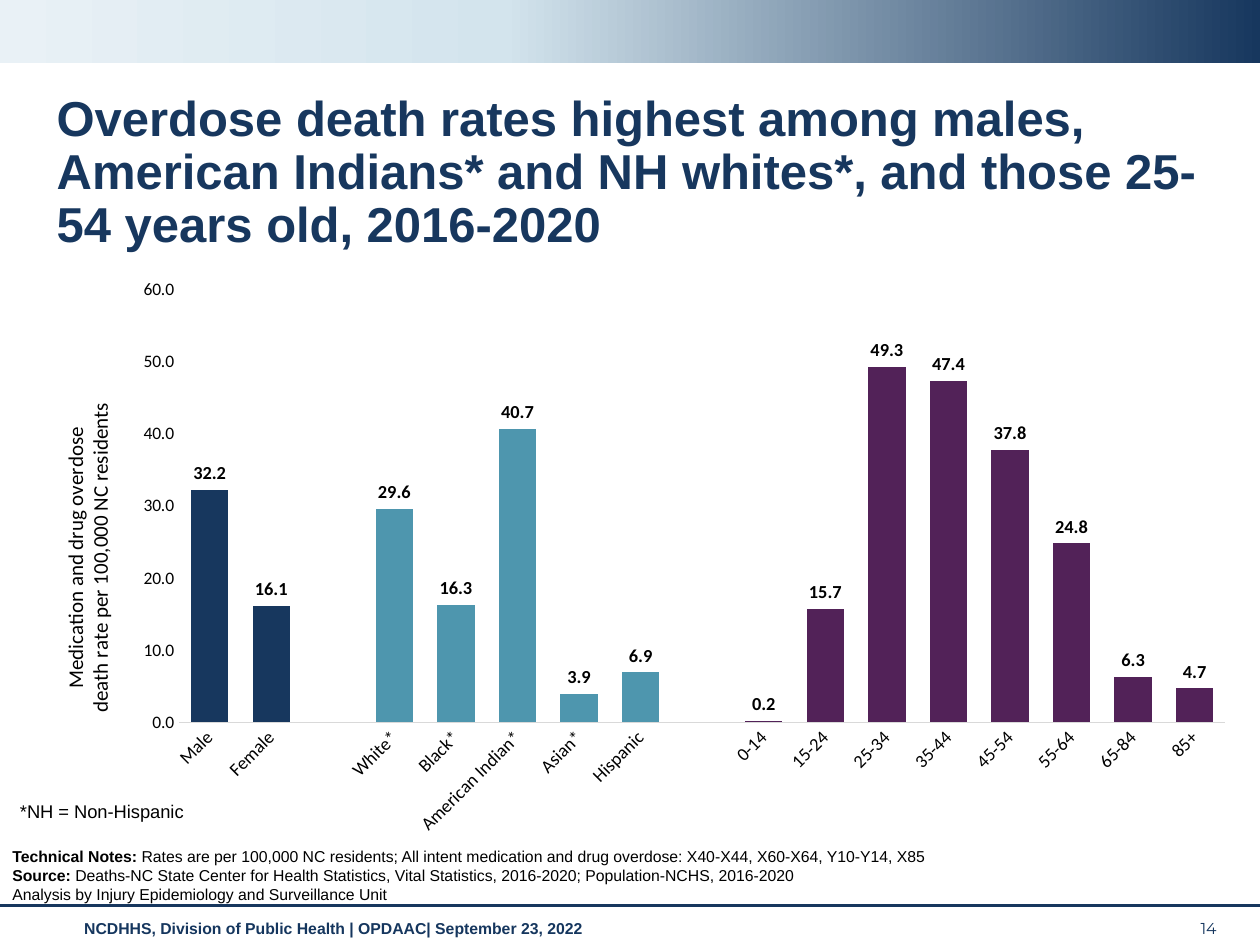
from copy import deepcopy

from lxml.etree import SubElement
from pptx import Presentation
from pptx.chart.data import CategoryChartData
from pptx.dml.color import RGBColor
from pptx.enum.chart import XL_CHART_TYPE, XL_LABEL_POSITION, XL_TICK_MARK
from pptx.enum.shapes import MSO_CONNECTOR, MSO_SHAPE
from pptx.enum.text import MSO_ANCHOR, PP_ALIGN
from pptx.oxml import parse_xml
from pptx.oxml.ns import nsdecls, qn
from pptx.util import Inches, Pt

NAVY, TEAL, PURPLE, BLACK = "17375E", "4E96AE", "522258", "000000"
FOOTER_BLUE = "15365E"
color = RGBColor.from_string


def set_font(font, size, name="Arial", hex_color=BLACK, bold=False):
    font.size, font.name, font.bold = Pt(size), name, bold
    font.color.rgb = color(hex_color)


def write_text(frame, paragraphs, anchor=MSO_ANCHOR.TOP, align=PP_ALIGN.LEFT,
               spacing=None, **font_format):
    """Fill a text frame; a paragraph is a string or a (bold lead, rest) pair."""
    frame.word_wrap = True
    frame.vertical_anchor = anchor
    for index, content in enumerate(paragraphs):
        paragraph = frame.paragraphs[0] if index == 0 else frame.add_paragraph()
        paragraph.alignment = align
        if spacing:
            paragraph.line_spacing = spacing
        parts = [content] if isinstance(content, str) else content
        for position, part in enumerate(parts):
            run = paragraph.add_run()
            run.text = part
            set_font(run.font, **font_format)
            if len(parts) > 1 and position == 0:
                run.font.bold = True


presentation = Presentation()
presentation.slide_width, presentation.slide_height = Inches(10), Inches(7.5)
slide = presentation.slides.add_slide(presentation.slide_layouts[5])

# Grid of 10 columns by 7.5 rows: left, top, width, height
column = presentation.slide_width / 10
row = presentation.slide_height / 7.5
grid = {
    "band": (0, 0, 10, 0.5),
    "title": (0.35, 0.7, 9.49, 1.16),
    "chart": (0.31, 2.14, 9.57, 4.6),
    "non_hispanic": (0.06, 6.3, 1.55, 0.28),
    "notes": (0, 6.67, 8.74, 0.55),
    "footer": (0.57, 7.22, 8.74, 0.29),
    "page_number": (9.43, 7.22, 0.44, 0.3),
}
boxes = {
    name: (int(left * column), int(top * row), int(width * column), int(height * row))
    for name, (left, top, width, height) in grid.items()
}

# Gradient band and footer rule
band = slide.shapes.add_shape(MSO_SHAPE.RECTANGLE, *boxes["band"])
band.shadow.inherit = False
band.line.fill.background()
band.fill.gradient()
band.fill.gradient_angle = 0
stop_list = band.element.spPr.find(qn("a:gradFill")).find(qn("a:gsLst"))
stop_list.append(deepcopy(stop_list[-1]))
band_stops = [(0, "E9F1F6"), (0.4, "D3E4ED"), (1, NAVY)]
for stop, (position, hex_color) in zip(band.fill.gradient_stops, band_stops):
    stop.position = position
    stop.color.rgb = color(hex_color)

rule_top = int(7.19 * row)
rule = slide.shapes.add_connector(
    MSO_CONNECTOR.STRAIGHT, 0, rule_top, presentation.slide_width, rule_top)
rule.line.color.rgb = color(NAVY)
rule.line.width = Pt(1.75)
SubElement(rule.element.spPr, qn("a:effectLst"))

# Title
title = slide.shapes.title
title.left, title.top, title.width, title.height = boxes["title"]
write_text(title.text_frame, [
    "Overdose death rates highest among males, American Indians* and NH whites*, "
    "and those 25-54 years old, 2016-2020"],
    spacing=0.9, size=28, hex_color=NAVY, bold=True)

# Chart: groups of bars with an empty category between them
groups = [
    (NAVY, {"Male": 32.2, "Female": 16.1}),
    (TEAL, {"White*": 29.6, "Black*": 16.3, "American Indian*": 40.7,
            "Asian*": 3.9, "Hispanic": 6.9}),
    (PURPLE, {"0-14": 0.2, "15-24": 15.7, "25-34": 49.3, "35-44": 47.4,
              "45-54": 37.8, "55-64": 24.8, "65-84": 6.3, "85+": 4.7}),
]
categories, rates, bar_colors = [], [], []
for hex_color, group in groups:
    if categories:
        categories.append("")
        rates.append(None)
        bar_colors.append(None)
    categories += group.keys()
    rates += group.values()
    bar_colors += [hex_color] * len(group)

chart_data = CategoryChartData(number_format="0.0")
chart_data.categories = categories
chart_data.add_series("Series 1", rates)
chart = slide.shapes.add_chart(
    XL_CHART_TYPE.COLUMN_CLUSTERED, *boxes["chart"], chart_data).chart
chart.has_legend = chart.has_title = False
set_font(chart.font, 10.5, "Calibri")

plot = chart.plots[0]
plot.gap_width, plot.overlap, plot.vary_by_categories = 65, -27, False
series = plot.series[0]
series.format.fill.solid()
series.format.fill.fore_color.rgb = color(PURPLE)
for index, hex_color in enumerate(bar_colors):
    if hex_color in (NAVY, TEAL):
        fill = series.points[index].format.fill
        fill.solid()
        fill.fore_color.rgb = color(hex_color)

labels = series.data_labels
labels.show_value = True
labels.position = XL_LABEL_POSITION.OUTSIDE_END
labels.number_format, labels.number_format_is_linked = "0.0", False
set_font(labels.font, 10.5, "Calibri", bold=True)

category_axis, value_axis = chart.category_axis, chart.value_axis
for axis, size in ((category_axis, 10.5), (value_axis, 10)):
    axis.major_tick_mark = axis.minor_tick_mark = XL_TICK_MARK.NONE
    axis.has_major_gridlines = False
    set_font(axis.tick_labels.font, size, "Calibri")
category_axis.format.line.color.rgb = color("D9D9D9")
category_axis.format.line.width = Pt(0.75)
category_text = category_axis._element.find(qn("c:txPr"))
category_text.find(qn("a:bodyPr")).set("rot", str(-45 * 60000))

value_axis.minimum_scale, value_axis.maximum_scale, value_axis.major_unit = 0, 60, 10
value_axis.tick_labels.number_format = "#,##0.0"
value_axis.tick_labels.number_format_is_linked = False
value_axis.format.line.fill.background()
axis_title = value_axis.axis_title.text_frame
write_text(axis_title,
           ["Medication and drug overdose", "death rate per 100,000 NC residents"],
           align=PP_ALIGN.CENTER, size=12, name="Calibri")
axis_title._txBody.find(qn("a:bodyPr")).set("rot", str(-90 * 60000))

plot_area = chart._chartSpace.chart.plotArea
for layout in plot_area.findall(qn("c:layout")):
    plot_area.remove(layout)
plot_area.insert(0, parse_xml(
    f'<c:layout {nsdecls("c")}><c:manualLayout><c:layoutTarget val="inner"/>'
    '<c:xMode val="edge"/><c:yMode val="edge"/><c:x val="0.116"/><c:y val="0.035"/>'
    '<c:w val="0.868"/><c:h val="0.746"/></c:manualLayout></c:layout>'))

# Notes and footer
notes = [
    ("Technical Notes: ", "Rates are per 100,000 NC residents; All intent medication "
     "and drug overdose: X40-X44, X60-X64, Y10-Y14, X85"),
    ("Source: ", "Deaths-NC State Center for Health Statistics, Vital Statistics, "
     "2016-2020; Population-NCHS, 2016-2020"),
    "Analysis by Injury Epidemiology and Surveillance Unit",
]
footer = ["NCDHHS, Division of Public Health | OPDAAC| September 23, 2022"]
small_texts = [
    ("non_hispanic", ["*NH = Non-Hispanic"], {"size": 10.5}),
    ("notes", notes, {"size": 9, "anchor": MSO_ANCHOR.BOTTOM}),
    ("footer", footer, {"size": 9, "hex_color": FOOTER_BLUE, "bold": True,
                        "anchor": MSO_ANCHOR.MIDDLE}),
    ("page_number", ["14"], {"size": 9, "name": "Montserrat", "hex_color": FOOTER_BLUE,
                             "anchor": MSO_ANCHOR.MIDDLE}),
]
for box_name, paragraphs, text_format in small_texts:
    write_text(slide.shapes.add_textbox(*boxes[box_name]).text_frame,
               paragraphs, **text_format)

presentation.save("out.pptx")
